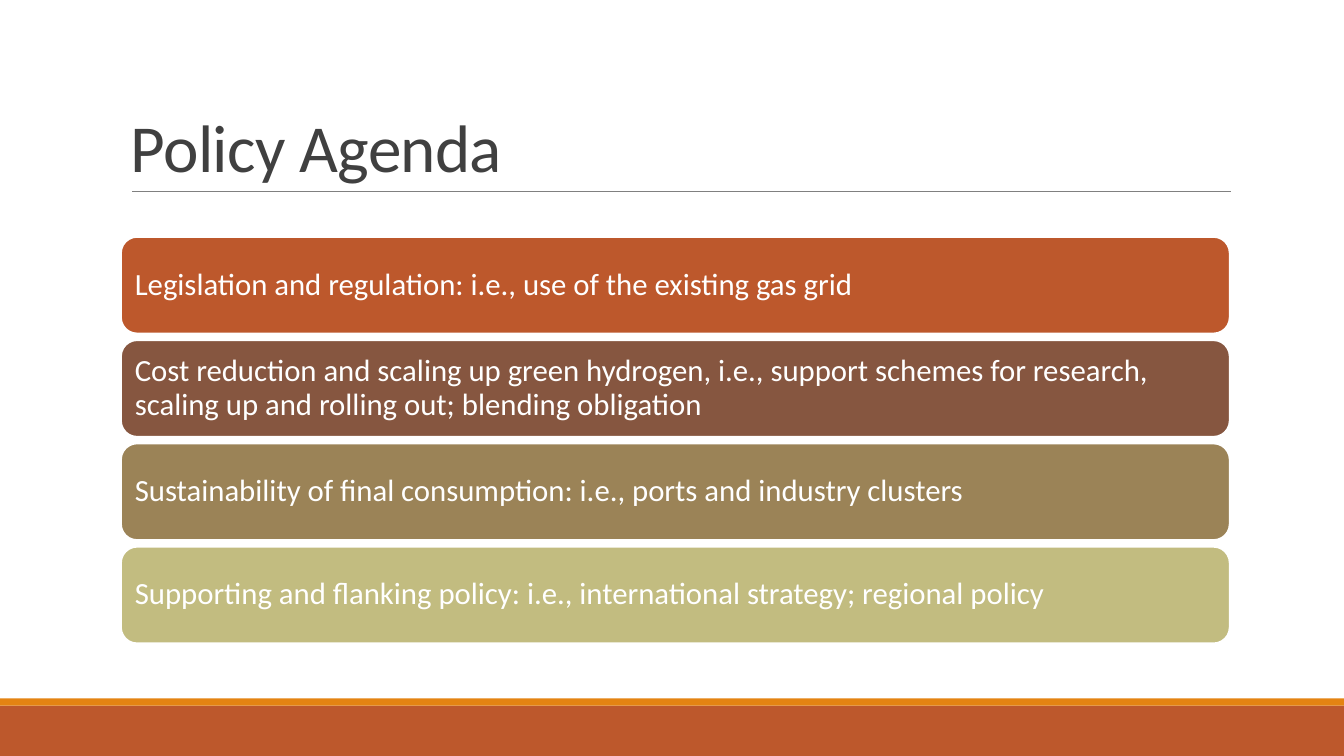
import pptx
import pptx.dml.color
import pptx.enum.shapes
import pptx.enum.text
import pptx.oxml.ns
import pptx.util
from lxml import etree

Cm = pptx.util.Cm
Pt = pptx.util.Pt
SHAPE = pptx.enum.shapes.MSO_SHAPE
ANCHOR = pptx.enum.text.MSO_ANCHOR
WIDTH, HEIGHT = 33.87, 19.05

POLICIES = [
    ("Legislation and regulation: i.e., use of the existing gas grid", "BD582C"),
    ("Cost reduction and scaling up green hydrogen, i.e., support schemes "
     "for research, scaling up and rolling out; blending obligation", "865640"),
    ("Sustainability of final consumption: i.e., ports and industry clusters",
     "9B8357"),
    ("Supporting and flanking policy: i.e., international strategy; "
     "regional policy", "C2BC80"),
]


def color(hex_string):
    return pptx.dml.color.RGBColor.from_string(hex_string)


def add_block(s, kind, left, top, width, height, fill):
    sp = s.shapes.add_shape(kind, Cm(left), Cm(top), Cm(width), Cm(height))
    sp.shadow.inherit = False
    sp.fill.solid()
    sp.fill.fore_color.rgb = color(fill)
    sp.line.fill.background()
    return sp


def write_text(sp, text, size, hex_string, spacing, anchor):
    tf = sp.text_frame
    tf.word_wrap = True
    tf.vertical_anchor = anchor
    p = tf.paragraphs[0]
    p.alignment = pptx.enum.text.PP_ALIGN.LEFT
    p.line_spacing = spacing
    r = p.add_run()
    r.text = text
    r.font.name = "Calibri"
    r.font.size = Pt(size)
    r.font.color.rgb = color(hex_string)
    return r


def add_footer(s, top, width, height):
    stripe = 0.18
    add_block(s, SHAPE.RECTANGLE, 0, top + stripe, width, height - stripe, "BD582C")
    add_block(s, SHAPE.RECTANGLE, 0, top, width, stripe, "E48312")


def add_title(s, left, top, width, height):
    sp = s.shapes.add_textbox(Cm(left), Cm(top), Cm(width), Cm(height))
    r = write_text(sp, "Policy Agenda", 48, "404040", 0.85, ANCHOR.BOTTOM)
    r.font._element.set("spc", "-50")  # tighter letter spacing

    # Rule under the title
    bottom = Cm(top + height + 0.02)
    rule = s.shapes.add_connector(
        pptx.enum.shapes.MSO_CONNECTOR.STRAIGHT,
        Cm(left + 0.28), bottom, Cm(left + width + 0.02), bottom)
    rule.line.color.rgb = color("808080")
    rule.line.width = Pt(0.5)
    etree.SubElement(rule._element.spPr, pptx.oxml.ns.qn("a:effectLst"))


def add_policies(s, left, top, width, height):
    gap = 0.17
    bar = (height - gap * (len(POLICIES) - 1)) / len(POLICIES)
    for i, (text, fill) in enumerate(POLICIES):
        sp = add_block(s, SHAPE.ROUNDED_RECTANGLE,
                       left, top + i * (bar + gap), width, bar, fill)
        sp.line.color.rgb = color("FFFFFF")
        sp.line.width = Pt(1.25)
        tf = sp.text_frame
        # The rounded outline already insets the text by about 0.12 cm
        tf.margin_left = tf.margin_right = Cm(0.23)
        tf.margin_top = tf.margin_bottom = Cm(0.23)
        write_text(sp, text, 22, "FFFFFF", 0.9, ANCHOR.MIDDLE)


def main():
    prs = pptx.Presentation()
    prs.slide_width, prs.slide_height = Cm(WIDTH), Cm(HEIGHT)
    s = prs.slides.add_slide(prs.slide_layouts[6])
    add_footer(s, 17.6, WIDTH, HEIGHT - 17.6)
    add_title(s, 3.05, 0.79, 27.94, 4.02)
    add_policies(s, 3.05, 5.97, 27.94, 10.24)
    prs.save("out.pptx")


if __name__ == "__main__":
    main()
